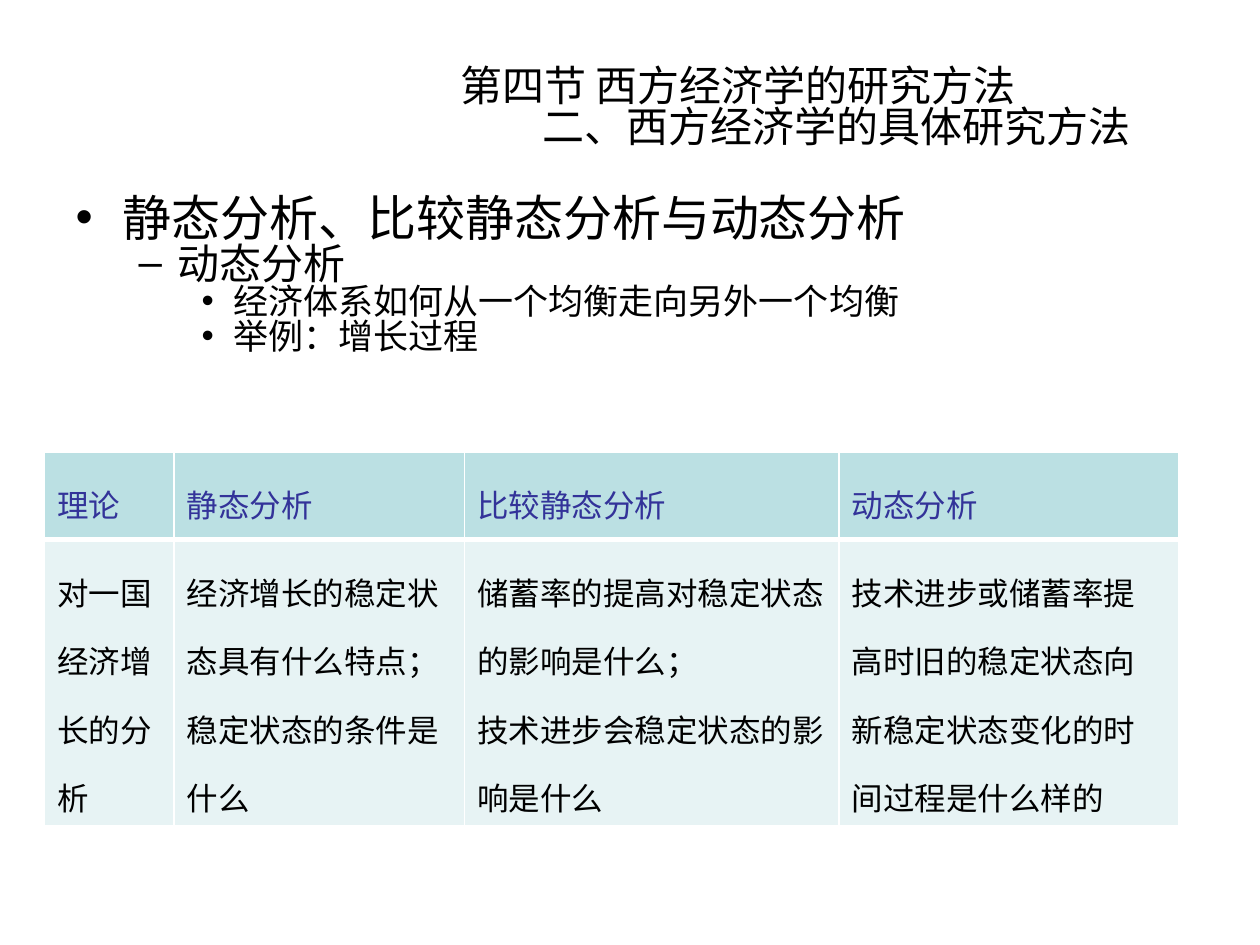
from lxml.etree import SubElement
from pptx import Presentation
from pptx.dml.color import RGBColor
from pptx.enum.text import MSO_ANCHOR as Anchor, MSO_AUTO_SIZE as AutoSize, PP_ALIGN as Align
from pptx.oxml.ns import qn
from pptx.util import Pt

BLACK = RGBColor(0x00, 0x00, 0x00)
WHITE = RGBColor(0xFF, 0xFF, 0xFF)
INDIGO = RGBColor(0x33, 0x33, 0x99)
TEAL = RGBColor(0xBB, 0xE0, 0xE3)
PALE_TEAL = RGBColor(0xE7, 0xF3, 0xF4)

LATIN_FONT = "Arial"
CHINESE_FONT = "Noto Sans CJK SC"

# text, left indent, font
TITLE_LINES = [
    ("第四节 西方经济学的研究方法", 220, CHINESE_FONT),
    ("二、西方经济学的具体研究方法", 267, LATIN_FONT),
]
# text, level
OUTLINE = [
    ("静态分析、比较静态分析与动态分析", 0),
    ("动态分析", 1),
    ("经济体系如何从一个均衡走向另外一个均衡", 2),
    ("举例：增长过程", 2),
]
LEVEL_SIZES = [28, 24, 20]

COLUMN_WIDTHS = [74, 166, 214, 194]
ROW_HEIGHTS = [50, 153]
HEADER = ["理论", "静态分析", "比较静态分析", "动态分析"]
GROWTH_ROW = [
    "对一国经济增长的分析",
    "经济增长的稳定状态具有什么特点；\n稳定状态的条件是什么",
    "储蓄率的提高对稳定状态的影响是什么；\n技术进步会稳定状态的影响是什么",
    "技术进步或储蓄率提高时旧的稳定状态向新稳定状态变化的时间过程是什么样的",
]


class SlideBuilder:
    def __init__(self, deck):
        self.page = deck.slides.add_slide(deck.slide_layouts[1])

    def style(self, para, size, color=BLACK, font=LATIN_FONT, spacing=0.82):
        para.line_spacing = spacing
        para.space_before = Pt(0)
        para.font.name = font
        para.font.size = Pt(size)
        para.font.bold = False
        para.font.color.rgb = color

    def place(self, box, left, top, width, height, inset):
        box.left, box.top, box.width, box.height = map(Pt, (left, top, width, height))
        frame = box.text_frame
        frame.word_wrap = True
        frame.auto_size = AutoSize.NONE
        frame.margin_top = Pt(inset)
        return frame

    def title(self, lines):
        frame = self.place(self.page.shapes.title, 36, 26.5, 648, 68, 8)
        frame.vertical_anchor = Anchor.MIDDLE
        frame.text = "\n".join(text for text, _, _ in lines)
        for para, (_, indent, font) in zip(frame.paragraphs, lines):
            para.alignment = Align.LEFT
            para._p.get_or_add_pPr().set("marL", str(Pt(indent)))
            self.style(para, 24, font=font)

    def outline(self, items):
        frame = self.place(self.page.placeholders[1], 36, 106, 648, 376.5, 7)
        frame.text = "\n".join(text for text, _ in items)
        for para, (_, level) in zip(frame.paragraphs, items):
            para.level = level
            self.style(para, LEVEL_SIZES[level])

    def table(self, left, top, rows):
        frame = self.page.shapes.add_table(
            len(rows), len(COLUMN_WIDTHS), Pt(left), Pt(top),
            Pt(sum(COLUMN_WIDTHS)), Pt(sum(ROW_HEIGHTS)))
        grid = frame.table
        for column, width in zip(grid.columns, COLUMN_WIDTHS):
            column.width = Pt(width)
        for index, (row, height) in enumerate(zip(grid.rows, ROW_HEIGHTS)):
            row.height = Pt(height)
            is_header = index == 0
            for cell, text in zip(row.cells, rows[index]):
                cell.text = text
                for para in cell.text_frame.paragraphs:
                    self.style(para, 18, INDIGO if is_header else BLACK, spacing=1.5)
                top_width, bottom_width = (1, 3) if is_header else (3, 1)
                self.borders(cell, L=1, R=1, T=top_width, B=bottom_width)
                cell.fill.solid()
                cell.fill.fore_color.rgb = TEAL if is_header else PALE_TEAL

    def borders(self, cell, **widths):
        properties = cell._tc.get_or_add_tcPr()
        for side, width in widths.items():
            line = SubElement(properties, qn(f"a:ln{side}"), w=str(Pt(width)))
            fill = SubElement(line, qn("a:solidFill"))
            SubElement(fill, qn("a:srgbClr"), val=str(WHITE))


def main():
    deck = Presentation()
    deck.slide_width, deck.slide_height = Pt(720), Pt(540)
    builder = SlideBuilder(deck)
    builder.title(TITLE_LINES)
    builder.outline(OUTLINE)
    builder.table(25.5, 258.5, [HEADER, GROWTH_ROW])
    deck.save("out.pptx")


if __name__ == "__main__":
    main()
